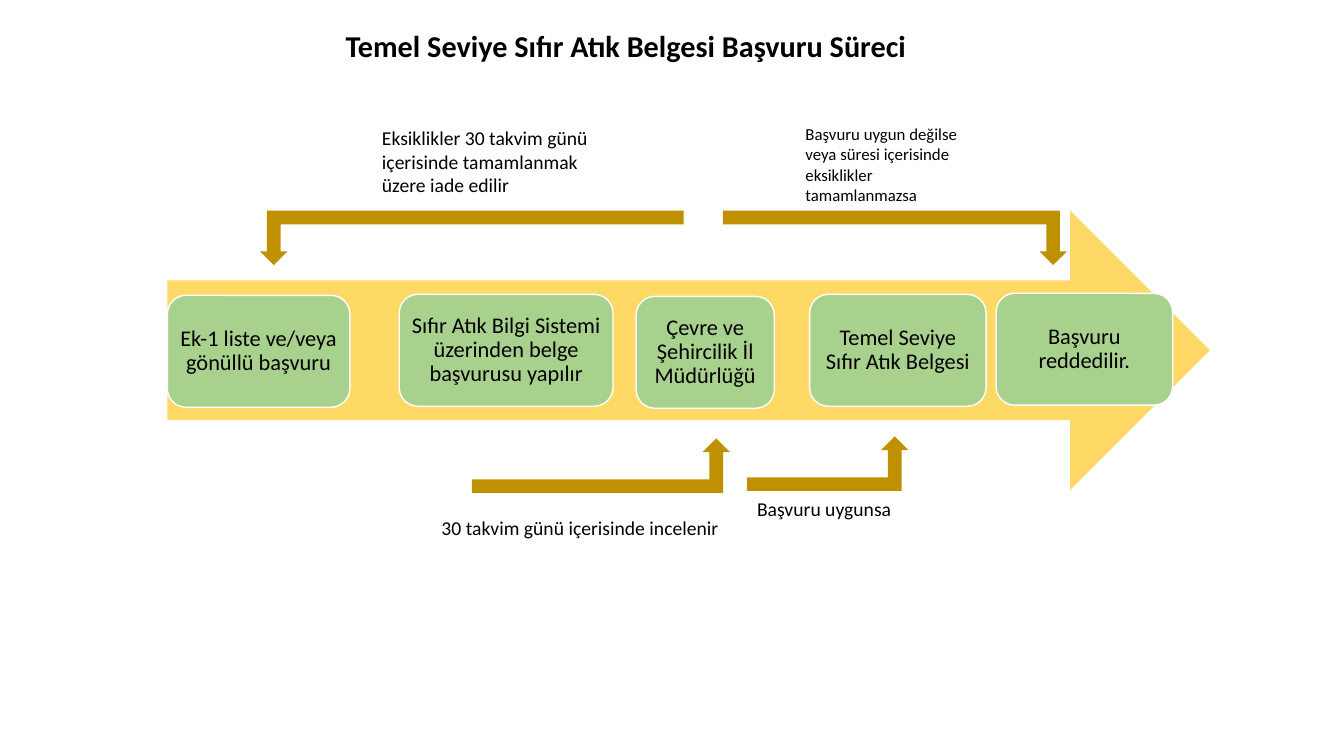
import pptx
import pptx.dml.color
import pptx.enum.shapes
import pptx.enum.text
import pptx.oxml.ns
import pptx.util

Inches = pptx.util.Inches
SHAPES = pptx.enum.shapes.MSO_SHAPE
ALIGN = pptx.enum.text.PP_ALIGN
ANCHOR = pptx.enum.text.MSO_ANCHOR

FONT = "Calibri"
COLORS = {
    "text": "000000",
    "process": "FFD966",
    "step": "A9D18E",
    "step_line": "FFFFFF",
    "bent_arrow": "BF9000",
}
STEP_HEIGHT = 1.11
BENT_HEIGHT = 0.54

# Left, top, width, text
STEPS = [
    (1.66, 2.93, 1.81, "Ek-1 liste ve/veya gönüllü başvuru"),
    (3.96, 2.92, 2.12, "Sıfır Atık Bilgi Sistemi üzerinden belge başvurusu yapılır"),
    (6.31, 2.94, 1.37, "Çevre ve Şehircilik İl Müdürlüğü"),
    (8.03, 2.92, 1.75, "Temel Seviye Sıfır Atık Belgesi"),
    (9.88, 2.91, 1.75, "Başvuru reddedilir."),
]

# Left, top, width, rotation, mirrored
BENT_ARROWS = [
    (4.68, 4.35, 2.56, 0, False),
    (2.58, 2.09, 4.2, 180, False),
    (7.41, 4.33, 1.6, 0, False),
    (7.17, 2.09, 3.41, 180, True),
]

# Left, top, width, height, size, text
NOTES = [
    (4.28, 5.07, 2.95, 0.34, 14, "30 takvim günü içerisinde incelenir"),
    (3.69, 1.2, 2.27, 0.81, 14,
     "Eksiklikler 30 takvim günü içerisinde tamamlanmak üzere iade edilir"),
    (7.41, 4.88, 1.72, 0.34, 14, "Başvuru uygunsa"),
    (7.89, 1.18, 1.98, 0.91, 12,
     "Başvuru uygun değilse veya süresi içerisinde eksiklikler tamamlanmazsa"),
]


def color(name):
    return pptx.dml.color.RGBColor.from_string(COLORS[name])


def write_text(shape, text, size, bold=False, align=ALIGN.LEFT, spacing=1.0):
    shape.text_frame.word_wrap = True
    shape.text_frame.text = text
    paragraph = shape.text_frame.paragraphs[0]
    paragraph.alignment = align
    paragraph.line_spacing = spacing
    font = paragraph.runs[0].font
    font.name = FONT
    font.size = pptx.util.Pt(size)
    font.bold = bold
    font.color.rgb = color("text")


def add_shape(slide, kind, left, top, width, height, fill):
    shape = slide.shapes.add_shape(
        kind, Inches(left), Inches(top), Inches(width), Inches(height))
    shape.shadow.inherit = False
    shape.fill.solid()
    shape.fill.fore_color.rgb = color(fill)
    shape.line.fill.background()
    return shape


def add_text(slide, left, top, width, height, text, size, **style):
    box = slide.shapes.add_textbox(
        Inches(left), Inches(top), Inches(width), Inches(height))
    write_text(box, text, size, **style)
    return box


def add_step(slide, left, top, width, text):
    step = add_shape(slide, SHAPES.ROUNDED_RECTANGLE,
                     left, top, width, STEP_HEIGHT, "step")
    step.line.color.rgb = color("step_line")
    step.line.width = pptx.util.Pt(1)
    frame = step.text_frame
    frame.margin_left = frame.margin_right = Inches(0.07)
    frame.margin_top = frame.margin_bottom = Inches(0.07)
    frame.vertical_anchor = ANCHOR.MIDDLE
    write_text(step, text, 16, align=ALIGN.CENTER, spacing=0.9)


def add_bent_arrow(slide, left, top, width, rotation, mirrored):
    arrow = add_shape(slide, SHAPES.BENT_UP_ARROW,
                      left, top, width, BENT_HEIGHT, "bent_arrow")
    arrow.rotation = rotation
    if mirrored:
        transform = arrow.element.spPr.find(pptx.oxml.ns.qn("a:xfrm"))
        transform.set("flipH", "1")


def main():
    presentation = pptx.Presentation()
    presentation.slide_width = Inches(13.33)
    presentation.slide_height = Inches(7.5)
    slide = presentation.slides.add_slide(presentation.slide_layouts[6])

    # Title
    title = add_text(slide, 3.33, 0.29, 6.06, 0.36,
                     "Temel Seviye Sıfır Atık Belgesi Başvuru Süreci",
                     21.6, bold=True, spacing=0.9)
    title.text_frame.vertical_anchor = ANCHOR.MIDDLE

    # Process arrow and its steps
    add_shape(slide, SHAPES.RIGHT_ARROW, 1.66, 2.09, 10.34, 2.77, "process")
    for step in STEPS:
        add_step(slide, *step)

    # Transitions between steps
    for bent_arrow in BENT_ARROWS:
        add_bent_arrow(slide, *bent_arrow)

    # Notes on the transitions
    for left, top, width, height, size, text in NOTES:
        note = add_text(slide, left, top, width, height, text, size)
        note.text_frame.auto_size = pptx.enum.text.MSO_AUTO_SIZE.SHAPE_TO_FIT_TEXT

    presentation.save("out.pptx")


if __name__ == "__main__":
    main()
